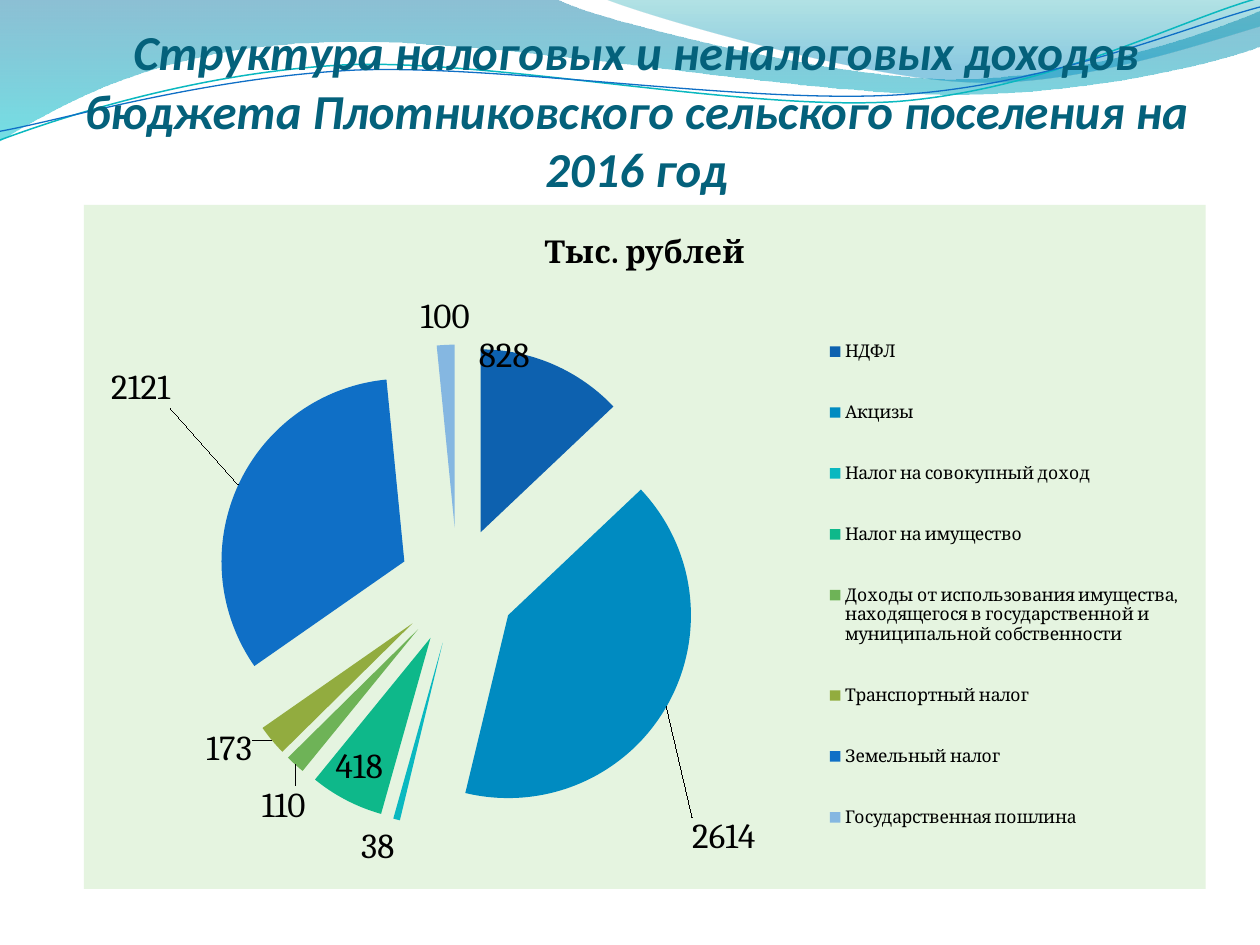
"""Build a slide with a wave header and an exploded pie chart of budget revenues."""
from dataclasses import dataclass
from typing import Optional

from lxml.etree import SubElement
from pptx import Presentation
from pptx.chart.data import CategoryChartData
from pptx.dml.color import RGBColor as Color
from pptx.enum.chart import XL_CHART_TYPE as ChartType
from pptx.enum.chart import XL_LABEL_POSITION as LabelPosition
from pptx.enum.chart import XL_LEGEND_POSITION as LegendPosition
from pptx.enum.text import MSO_ANCHOR as Anchor
from pptx.enum.text import PP_ALIGN as Align
from pptx.oxml import parse_xml
from pptx.oxml.ns import nsdecls, qn
from pptx.util import Pt

TITLE_COLOR = Color(0x04, 0x61, 0x7B)
BLACK = Color(0, 0, 0)
PANEL_COLOR = Color(0xE5, 0xF4, 0xE0)
TEAL = Color(0x0A, 0xB8, 0xBF)
BLUE = Color(0x0F, 0x6F, 0xC6)
TITLE = ("Структура налоговых и неналоговых доходов бюджета "
         "Плотниковского сельского поселения на 2016 год")
CHART_NAME = "Тыс. рублей"
CHART_WIDTH, CHART_HEIGHT = 641, 391
EXPLOSION = 32


@dataclass(frozen=True)
class GradientStop:
    """A gradient stop with position and opacity in percent."""
    position: int
    color: Color
    opacity: int


@dataclass(frozen=True)
class Wave:
    """A path in points: two numbers make a line, six a Bézier curve."""
    start: tuple[float, float]
    segments: tuple[tuple[float, ...], ...]
    stops: tuple[GradientStop, ...] = ()
    line_color: Optional[Color] = None
    line_width: float = 0


@dataclass(frozen=True)
class Revenue:
    """A pie slice with the shift of its label in points."""
    name: str
    amount: int
    color: Color
    label_shift: Optional[tuple[float, float]] = None


WAVES = (
    Wave((0, 0), ((317, -1), (343, 12, 478, 45, 546, 45), (614, 45, 690, 19, 720, 6),
                  (721, 26), (708, 32, 626, 55, 537, 54), (448, 53, 275, 20, 185, 24),
                  (93, 26, 33, 60, -1, 81)),
         (GradientStop(0, Color(0x00, 0x74, 0xA1), 45),
          GradientStop(100, Color(0x00, 0xC6, 0xCF), 55))),
    Wave((345, -1), ((366, 8, 491, 45, 554, 47), (616, 50, 692, 23, 720, 15), (720, 0)),
         (GradientStop(0, Color(0x00, 0xA1, 0xA9), 30),
          GradientStop(80, Color(0x00, 0x8B, 0xBF), 45))),
    Wave((0, 80), ((35, 67, 114, 41, 199, 37), (284, 34, 427, 64, 513, 58),
                   (600, 51, 675, 11, 719, -1)), line_color=TEAL, line_width=0.85),
    Wave((0, 75), ((34, 69, 118, 44, 204, 40), (290, 37, 430, 60, 516, 54),
                   (602, 48, 678, 15, 720, 4)), line_color=BLUE, line_width=0.75),
)

REVENUES = (
    Revenue("НДФЛ", 828, Color(0x0D, 0x61, 0xAF), (-44, 11)),
    Revenue("Акцизы", 2614, Color(0x00, 0x8B, 0xC1), (11, 61)),
    Revenue("Налог на совокупный доход", 38, Color(0x0A, 0xB8, 0xC0)),
    Revenue("Налог на имущество", 418, Color(0x0E, 0xB8, 0x8A), (23, -34)),
    Revenue("Доходы от использования имущества, находящегося в государственной "
            "и муниципальной собственности", 110, Color(0x6E, 0xB3, 0x57), (9, 9)),
    Revenue("Транспортный налог", 173, Color(0x92, 0xAC, 0x3F), (-8, -9)),
    Revenue("Земельный налог", 2121, BLUE, (-35, -42)),
    Revenue("Государственная пошлина", 100, Color(0x85, 0xB7, 0xE1)),
)


def bend(shape, wave: Wave) -> None:
    """Turn the straight segments of a shape into the curves of a wave."""
    left, top = shape.left, shape.top
    lines = list(shape.element.iter(qn("a:lnTo")))
    for line, segment in zip(lines, wave.segments):
        if len(segment) == 6:
            points = "".join(f'<a:pt x="{Pt(x) - left}" y="{Pt(y) - top}"/>'
                             for x, y in zip(segment[::2], segment[1::2]))
            line.getparent().replace(line, parse_xml(
                f'<a:cubicBezTo {nsdecls("a")}>{points}</a:cubicBezTo>'))


def draw_wave(slide, wave: Wave) -> None:
    """Draw a filled wave or a wavy line."""
    builder = slide.shapes.build_freeform(Pt(wave.start[0]), Pt(wave.start[1]))
    ends = [(Pt(segment[-2]), Pt(segment[-1])) for segment in wave.segments]
    builder.add_line_segments(ends, close=bool(wave.stops))
    shape = builder.convert_to_shape()
    bend(shape, wave)
    shape.shadow.inherit = False
    shape.fill.background()
    if wave.stops:
        shape.line.fill.background()
        stops = "".join(
            f'<a:gs pos="{stop.position * 1000}"><a:srgbClr val="{stop.color}">'
            f'<a:alpha val="{stop.opacity * 1000}"/></a:srgbClr></a:gs>' for stop in wave.stops)
        no_fill = shape.element.spPr.find(qn("a:noFill"))
        no_fill.getparent().replace(no_fill, parse_xml(
            f'<a:gradFill {nsdecls("a")}><a:gsLst>{stops}</a:gsLst>'
            '<a:lin ang="5400000" scaled="0"/></a:gradFill>'))
    else:
        shape.line.color.rgb = wave.line_color
        shape.line.width = Pt(wave.line_width)


def draw_title(slide) -> None:
    """Write the slide title."""
    frame = slide.shapes.add_textbox(Pt(36.7), Pt(12), Pt(653.8), Pt(101)).text_frame
    frame.word_wrap = True
    frame.vertical_anchor = Anchor.BOTTOM
    frame.margin_left = frame.margin_right = frame.margin_top = frame.margin_bottom = 0
    paragraph = frame.paragraphs[0]
    paragraph.text = TITLE
    paragraph.alignment = Align.CENTER
    font = paragraph.font
    font.name, font.size, font.bold, font.italic = "Calibri", Pt(27.9), True, True
    font.color.rgb = TITLE_COLOR


def manual_layout(target=None, **settings):
    """Return a manual chart layout with the given settings."""
    layout = parse_xml(f'<c:layout {nsdecls("c")}><c:manualLayout/></c:layout>')
    if target:
        SubElement(layout[0], qn("c:layoutTarget")).set("val", target)
    for name, value in settings.items():
        SubElement(layout[0], qn(f"c:{name}")).set("val", str(value))
    return layout


def style_slice(point, revenue: Revenue) -> None:
    """Color and explode a slice and place its label."""
    point.format.fill.solid()
    point.format.fill.fore_color.rgb = revenue.color
    properties = point.format.fill._xPr
    properties.addprevious(parse_xml(f'<c:explosion {nsdecls("c")} val="{EXPLOSION}"/>'))
    label = point.data_label
    label.font.size = Pt(20)
    label.position = LabelPosition.OUTSIDE_END
    if revenue.label_shift:
        x, y = revenue.label_shift
        label._dLbl.find(qn("c:idx")).addnext(
            manual_layout(x=x / CHART_WIDTH, y=y / CHART_HEIGHT))


def draw_chart(slide) -> None:
    """Draw the pie chart of revenues."""
    data = CategoryChartData()
    data.categories = [revenue.name for revenue in REVENUES]
    data.add_series(CHART_NAME, [revenue.amount for revenue in REVENUES])
    chart = slide.shapes.add_chart(ChartType.PIE, Pt(48), Pt(117),
                                   Pt(CHART_WIDTH), Pt(CHART_HEIGHT), data).chart
    chart.font.name, chart.font.size = "Cambria", Pt(10)
    chart.font.color.rgb = BLACK
    chart._chartSpace.find(qn("c:txPr")).addprevious(parse_xml(
        f'<c:spPr {nsdecls("c", "a")}><a:solidFill><a:srgbClr val="{PANEL_COLOR}"/>'
        '</a:solidFill><a:ln><a:noFill/></a:ln></c:spPr>'))

    chart.has_title = True
    paragraph = chart.chart_title.text_frame.paragraphs[0]
    paragraph.text = CHART_NAME
    font = paragraph.font
    font.name, font.size, font.bold = "Cambria", Pt(18), True
    font.color.rgb = BLACK

    chart.has_legend = True
    chart.legend.position = LegendPosition.RIGHT
    chart.legend.include_in_layout = False
    chart.legend.font.size = Pt(10)
    chart.legend._element.find(qn("c:legendPos")).addnext(manual_layout(
        xMode="edge", yMode="edge", x=0.66, y=0.14, w=0.32, h=0.83))

    plot = chart.plots[0]
    plot.vary_by_categories = True
    area = chart._chartSpace.chart.plotArea
    for layout in area.findall(qn("c:layout")):
        area.remove(layout)
    diameter = 209
    area.insert(0, manual_layout("inner", xMode="edge", yMode="edge", x=0.17, y=0.29,
                                 w=diameter / CHART_WIDTH, h=diameter / CHART_HEIGHT))
    series = plot.series[0]
    series.data_labels.show_value = True
    series.data_labels.font.size = Pt(20)
    for index, revenue in enumerate(REVENUES):
        style_slice(series.points[index], revenue)


def main() -> None:
    """Build and save the presentation."""
    presentation = Presentation()
    presentation.slide_width, presentation.slide_height = Pt(720), Pt(540)
    slide = presentation.slides.add_slide(presentation.slide_layouts[6])
    for wave in WAVES:
        draw_wave(slide, wave)
    draw_title(slide)
    draw_chart(slide)
    presentation.save("out.pptx")


if __name__ == "__main__":
    main()
